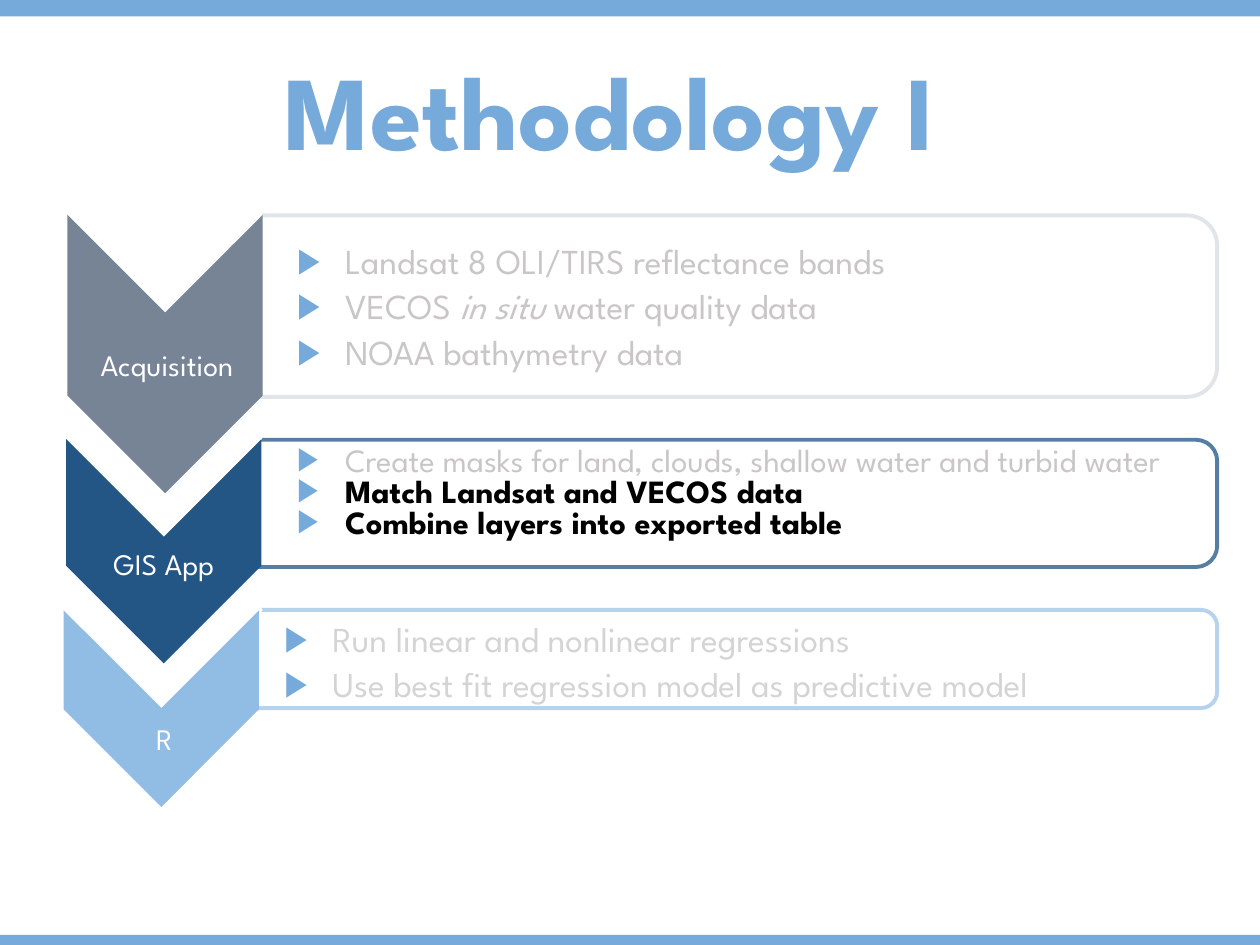
from dataclasses import dataclass

from lxml import etree
from pptx import Presentation
from pptx.dml.color import RGBColor
from pptx.enum import shapes, text
from pptx.oxml.ns import qn
from pptx.util import Inches, Pt

FONT = "League Spartan"
COLORS = {
    "accent": "75AADB", "white": "FFFFFF", "black": "000000", "muted": "C8C6C6",
    "slate": "768496", "navy": "235685", "sky": "91BCE3",
    "slate_edge": "183C5C", "navy_edge": "577EA2", "sky_edge": "B6D2EC",
}
PANEL_LEFT, PANEL_WIDTH = 1.84, 7.82
CHEVRON_WIDTH = 1.55
MASK_ANGLE = 135.3
INDENT = 0.38

Box = tuple[float, float, float, float]


@dataclass
class Step:
    """One bullet, as (words, font format) pieces."""
    pieces: list[tuple[str, dict]]
    color: str = "muted"


@dataclass
class Stage:
    label: str
    label_box: Box
    fill: str
    edge: str
    panel_top: float
    panel_height: float
    chevron_center: tuple[float, float]
    chevron_length: float
    masks: list[Box]
    steps_box: Box
    steps: list[Step]
    size: float = 20
    line_spacing: float = 1.0
    edge_alpha: int = 100
    text_alpha: int = 100


STAGES = [
    Stage("Acquisition", (0.58, 2.7, 1.49, 0.39), "slate", "slate_edge",
          1.71, 1.44, (1.31, 2.81), 2.21, [(1.71, 1.76, 0.39, 0.09)],
          (2.26, 1.85, 7.88, 1.17),
          [Step([("Landsat 8 OLI/TIRS reflectance bands", {})]),
           Step([("VECOS ", {}), ("in situ", {"italic": True}),
                 (" water quality data", {})]),
           Step([("NOAA bathymetry data", {})])],
          edge_alpha=13),
    Stage("GIS App", (0.79, 4.28, 1.02, 0.39), "navy", "navy_edge",
          3.49, 1.01, (1.3, 4.375), 1.78,
          [(1.71, 3.54, 0.39, 0.09), (1.76, 3.46, 0.21, 0.1)],
          (2.26, 3.53, 7.65, 1.09),
          [Step([("Create masks for land, clouds, shallow water and turbid water", {})]),
           Step([("Match Landsat and VECOS data", {"bold": True})], "black"),
           Step([("Combine layers into exported table", {"bold": True})], "black")],
          size=18.5, line_spacing=0.7),
    Stage("R", (1.14, 5.67, 0.3, 0.39), "sky", "sky_edge",
          4.84, 0.78, (1.28, 5.625), 1.56, [(1.69, 4.87, 0.4, 0.13)],
          (2.16, 4.85, 7.76, 0.8),
          [Step([("Run linear and nonlinear regressions", {})], "black"),
           Step([("Use best fit regression model as predictive model", {})], "black")],
          text_alpha=16),
]


def rgb(name: str) -> RGBColor:
    return RGBColor.from_string(COLORS[name])


def set_alpha(element, percent: int) -> None:
    """Make every solid fill below the element partly transparent."""
    if percent < 100:
        for fill in element.iter(qn("a:solidFill")):
            etree.SubElement(fill[0], qn("a:alpha"), val=str(percent * 1000))


def add_block(slide, kind, box: Box, fill=None, edge=None, edge_width=1.0, angle=0.0):
    block = slide.shapes.add_shape(kind, *map(Inches, box))
    block.shadow.inherit = False
    block.rotation = angle
    if fill:
        block.fill.solid()
        block.fill.fore_color.rgb = rgb(fill)
    else:
        block.fill.background()
    if edge:
        block.line.color.rgb = rgb(edge)
        block.line.width = Pt(edge_width)
    else:
        block.line.fill.background()
    return block


def add_run(paragraph, words: str, size: float, color: str, **font_format) -> None:
    run = paragraph.add_run()
    run.text = words
    values = {"name": FONT, "size": Pt(size)} | font_format
    for attribute, value in values.items():
        setattr(run.font, attribute, value)
    run.font.color.rgb = rgb(color)


def add_frame(slide, box: Box, wrap: bool = True):
    frame = slide.shapes.add_textbox(*map(Inches, box)).text_frame
    frame.word_wrap = wrap
    return frame


def add_bullet(paragraph) -> None:
    properties = paragraph._p.get_or_add_pPr()
    properties.set("marL", str(Inches(INDENT)))
    properties.set("indent", str(-Inches(INDENT)))
    bullet_color = etree.SubElement(properties, qn("a:buClr"))
    etree.SubElement(bullet_color, qn("a:srgbClr"), val=COLORS["accent"])
    etree.SubElement(properties, qn("a:buFont"), typeface="Arial")
    etree.SubElement(properties, qn("a:buChar"), char="▶")


def add_steps(slide, stage: Stage) -> None:
    frame = add_frame(slide, stage.steps_box)
    for index, step in enumerate(stage.steps):
        paragraph = frame.add_paragraph() if index else frame.paragraphs[0]
        add_bullet(paragraph)
        paragraph.line_spacing = stage.line_spacing
        paragraph.space_before = Pt(2 if index else 0)
        for words, font_format in step.pieces:
            add_run(paragraph, words, stage.size, step.color, **font_format)
        set_alpha(paragraph._p, stage.text_alpha)


def add_stage(slide, stage: Stage) -> None:
    add_steps(slide, stage)
    kinds = shapes.MSO_SHAPE
    panel = add_block(slide, kinds.ROUNDED_RECTANGLE,
                      (PANEL_LEFT, stage.panel_top, PANEL_WIDTH, stage.panel_height),
                      edge=stage.edge, edge_width=2.25)
    set_alpha(panel.line._get_or_add_ln(), stage.edge_alpha)
    for mask in stage.masks:
        add_block(slide, kinds.RECTANGLE, mask, "white", "white", angle=MASK_ANGLE)
    center_x, center_y = stage.chevron_center
    add_block(slide, kinds.CHEVRON,
              (center_x - stage.chevron_length / 2, center_y - CHEVRON_WIDTH / 2,
               stage.chevron_length, CHEVRON_WIDTH), stage.fill, angle=90)
    label = add_frame(slide, stage.label_box, wrap=False).paragraphs[0]
    label.alignment = text.PP_ALIGN.CENTER
    add_run(label, stage.label, 17, "white")


def main() -> None:
    deck = Presentation()
    deck.slide_width, deck.slide_height = Inches(10), Inches(7.5)
    slide = deck.slides.add_slide(deck.slide_layouts[6])
    for top, height in ((0, 0.13), (7.42, 0.08)):
        add_block(slide, shapes.MSO_SHAPE.RECTANGLE, (0, top, 10, height), "accent")
    for stage in STAGES:
        add_stage(slide, stage)
    title = add_frame(slide, (2.16, 0.31, 6.22, 1.11)).paragraphs[0]
    add_run(title, "Methodology I", 60, "accent", bold=True)
    deck.save("out.pptx")


if __name__ == "__main__":
    main()
